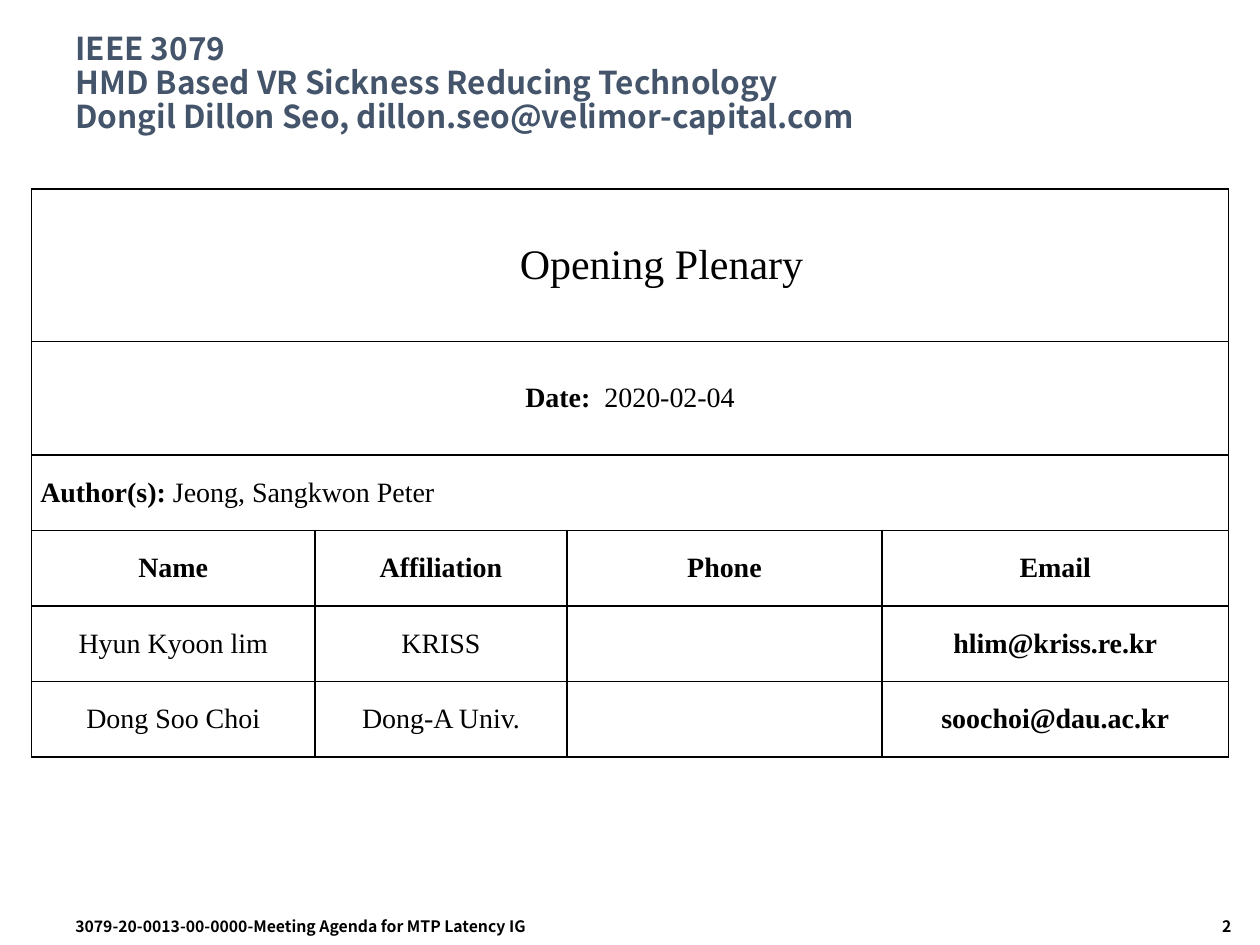
from lxml import etree
from pptx import Presentation
from pptx.dml.color import RGBColor
from pptx.enum.text import MSO_ANCHOR, PP_ALIGN
from pptx.oxml.ns import qn
from pptx.util import Inches, Pt

LEFT, CENTER, RIGHT = PP_ALIGN.LEFT, PP_ALIGN.CENTER, PP_ALIGN.RIGHT
TOP, MIDDLE = MSO_ANCHOR.TOP, MSO_ANCHOR.MIDDLE
BLACK, SLATE = "000000", "44546A"
SANS, SERIF = "Noto Sans CJK KR", "Times New Roman"
COLUMN_WIDTHS = [2.25, 2, 2.5, 2.75]
ROW_HEIGHTS = [1.21, 0.9, 0.6, 0.6, 0.6, 0.6]
TITLE_LINES = [
    "IEEE 3079",
    "HMD Based VR Sickness Reducing Technology",
    "Dongil Dillon Seo, dillon.seo@velimor-capital.com",
]
BANNER_ROWS = [
    ([("Opening Plenary", False)], {"size": 24, "indent": 0.5, "space_after": 12}),
    ([("Date:", True), ("  2020-02-04", False)], {"space_after": 12}),
    ([("Author(s): ", True), ("Jeong, Sangkwon Peter", False)], {"align": LEFT}),
]
AUTHOR_ROWS = [
    ["Name", "Affiliation", "Phone", "Email"],
    ["Hyun Kyoon lim", "KRISS", "", "hlim@kriss.re.kr"],
    ["Dong Soo Choi", "Dong-A Univ.", "", "soochoi@dau.ac.kr"],
]


def color(value):
    """Turn a hex string into a colour."""
    return RGBColor.from_string(value)


def write(paragraph, text, *, font, size, fill=BLACK, bold=False):
    """Add one formatted run to a paragraph."""
    run = paragraph.add_run()
    run.text = text
    run.font.name, run.font.size, run.font.bold = font, Pt(size), bold
    run.font.color.rgb = color(fill)
    properties = run.font._element
    etree.SubElement(properties, qn("a:ea"), typeface=font)


class SlideBuilder:
    """Hold the style and the current slide."""

    def __init__(self, slide):
        """Keep the slide to draw on."""
        self.slide = slide

    def text_box(self, box, lines, size, fill=BLACK, align=LEFT, anchor=TOP, spacing=None):
        """Add a bold sans text box with line breaks between lines."""
        shape = self.slide.shapes.add_textbox(*map(Inches, box))
        frame = shape.text_frame
        frame.word_wrap = True
        frame.vertical_anchor = anchor
        paragraph = frame.paragraphs[0]
        paragraph.alignment = align
        paragraph.line_spacing = spacing
        for index, line in enumerate(lines):
            if index:
                paragraph.add_line_break()
            write(paragraph, line, font=SANS, size=size, fill=fill, bold=True)

    def border(self, cell):
        """Draw thin black lines on all sides of a cell."""
        properties = cell._tc.get_or_add_tcPr()
        for index, side in enumerate(("a:lnL", "a:lnR", "a:lnT", "a:lnB")):
            line = etree.Element(qn(side), w=str(Pt(1)))
            solid = etree.SubElement(line, qn("a:solidFill"))
            etree.SubElement(solid, qn("a:srgbClr"), val=BLACK)
            properties.insert(index, line)

    def cell_text(self, cell, runs, size=16, align=CENTER, indent=0, space_after=0):
        """Write bold and regular runs into a cell."""
        paragraph = cell.text_frame.paragraphs[0]
        paragraph.alignment = align
        paragraph.space_after = Pt(space_after)
        if indent:
            paragraph._p.get_or_add_pPr().set("marL", str(Inches(indent)))
        for text, bold in runs:
            write(paragraph, text, font=SERIF, size=size, bold=bold)

    def table(self, left, top):
        """Add the meeting table with merged banner rows."""
        frame = self.slide.shapes.add_table(
            len(ROW_HEIGHTS), len(COLUMN_WIDTHS), Inches(left), Inches(top),
            Inches(sum(COLUMN_WIDTHS)), Inches(sum(ROW_HEIGHTS)))
        table = frame.table
        table.first_row = table.horz_banding = False
        for column, width in zip(table.columns, COLUMN_WIDTHS):
            column.width = Inches(width)
        for row, height in zip(table.rows, ROW_HEIGHTS):
            row.height = Inches(height)
        for cell in table.iter_cells():
            cell.fill.background()
            cell.vertical_anchor = MIDDLE
            cell.margin_left = cell.margin_right = Inches(0.07)
            cell.margin_top = cell.margin_bottom = 0
            self.border(cell)
        last_column = len(COLUMN_WIDTHS) - 1
        for index, (runs, style) in enumerate(BANNER_ROWS):
            table.cell(index, 0).merge(table.cell(index, last_column))
            self.cell_text(table.cell(index, 0), runs, **style)
        for row, texts in enumerate(AUTHOR_ROWS):
            for column, text in enumerate(texts):
                if text:
                    bold = row == 0 or column == last_column
                    cell = table.cell(row + len(BANNER_ROWS), column)
                    self.cell_text(cell, [(text, bold)])


def main():
    """Build and save the slide."""
    presentation = Presentation()
    presentation.slide_width, presentation.slide_height = Inches(10), Inches(7.5)
    builder = SlideBuilder(presentation.slides.add_slide(presentation.slide_layouts[6]))
    builder.table(0.25, 1.5)
    builder.text_box((0.5, 0.17, 9, 1), TITLE_LINES, 18, SLATE, anchor=MIDDLE, spacing=0.9)
    builder.text_box((8.25, 7.23, 1.62, 0.27), ["2"], 9, align=RIGHT)
    builder.text_box((0.5, 7.23, 5.33, 0.27),
                     ["3079-20-0013-00-0000-Meeting Agenda for MTP Latency IG"], 9)
    presentation.save("out.pptx")


if __name__ == "__main__":
    main()
